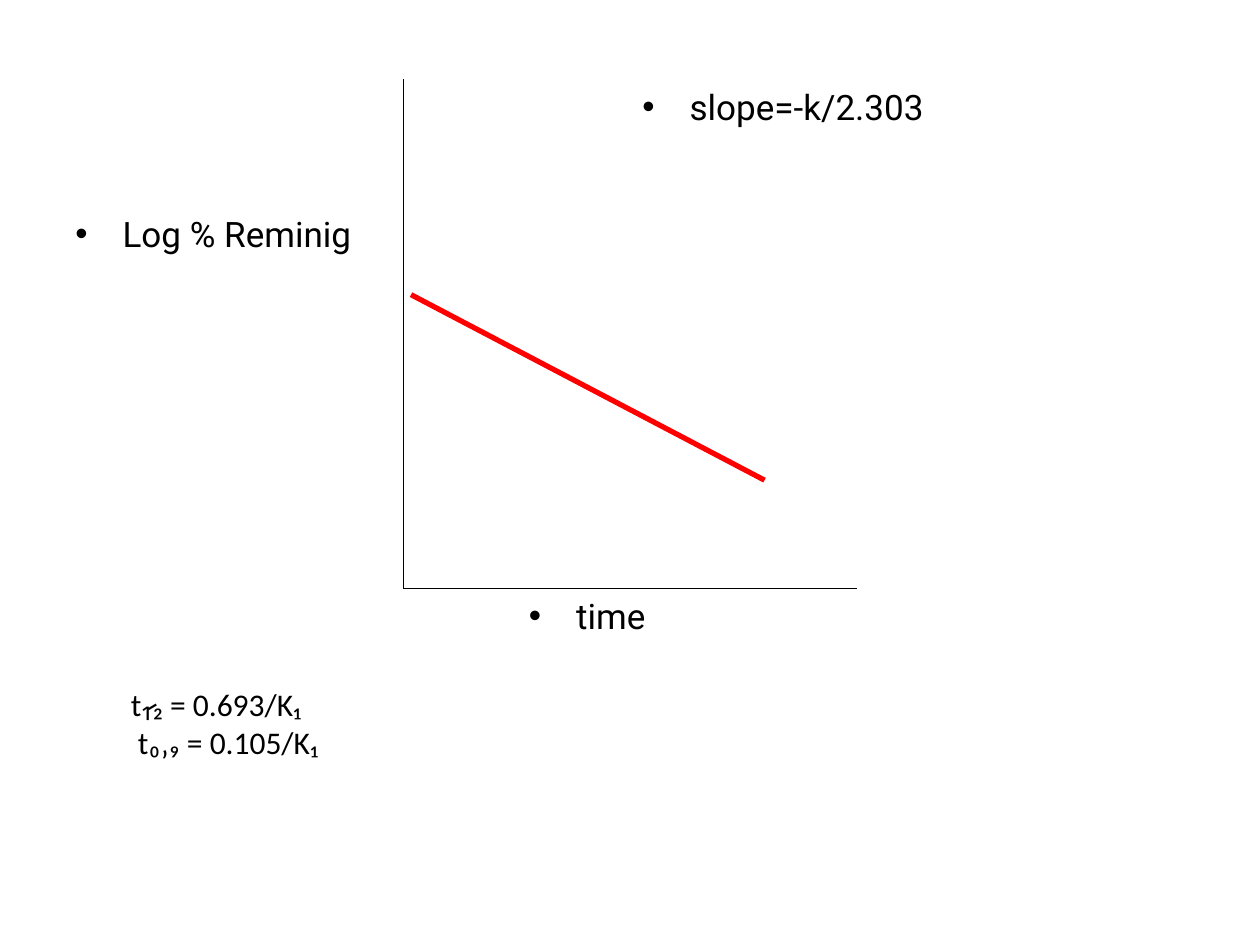
import pptx
import pptx.util
import pptx.dml.color
import pptx.enum.shapes
import pptx.enum.text
import lxml.etree
from pptx.oxml.ns import qn

Pt = pptx.util.Pt
BLACK = pptx.dml.color.RGBColor(0x00, 0x00, 0x00)
RED = pptx.dml.color.RGBColor(0xFF, 0x00, 0x00)
BULLET_INDENT = 27


def add_text(slide, box, text, *, font, size, color=BLACK, bullet=False):
    """Place text in box (left, top, width, height); each line is a paragraph."""
    frame = slide.shapes.add_textbox(*map(Pt, box)).text_frame
    frame.word_wrap = True
    frame.text = text
    for paragraph in frame.paragraphs:
        paragraph.alignment = pptx.enum.text.PP_ALIGN.LEFT
        paragraph.font.name = font
        paragraph.font.size = Pt(size)
        paragraph.font.color.rgb = color
        if bullet:
            properties = paragraph._p.get_or_add_pPr()
            properties.set("marL", str(Pt(BULLET_INDENT)))
            properties.set("indent", str(-Pt(BULLET_INDENT)))
            bullet_font = lxml.etree.Element(qn("a:buFont"), typeface="Arial")
            bullet_mark = lxml.etree.Element(qn("a:buChar"), char="•")
            properties.insert(0, bullet_font)
            bullet_font.addnext(bullet_mark)


def add_line(slide, start, end, color, width):
    line = slide.shapes.add_connector(
        pptx.enum.shapes.MSO_CONNECTOR.STRAIGHT, *map(Pt, (*start, *end)))
    line.line.color.rgb = color
    line.line.width = Pt(width)
    lxml.etree.SubElement(line._element.spPr, qn("a:effectLst"))


def add_decay_plot(slide, left, top, width, height):
    """Draw the axes in the box, with the decay line and the labels around them."""
    right, bottom = left + width, top + height
    add_line(slide, (left, top), (left, bottom), BLACK, 0.75)
    add_line(slide, (right, bottom), (left, bottom), BLACK, 0.75)
    add_line(slide, (left + 4.5, top + 123), (left + 206.5, top + 229), RED, 3)

    labels = (
        ("Log % Reminig", (left - 194.4, top + 72.7, 194.4, 56)),
        ("time", (left + 64.8, bottom, 259.2, 46)),
        ("slope=-k/2.303", (left + 129.6, top, 324, 56)),
    )
    for label, box in labels:
        add_text(slide, box, label, font="Roboto", size=20, bullet=True)


def add_half_life_formulas(slide, left, top, width, height):
    add_text(slide, (left, top, width, height),
             "t₁̷₂ = 0.693/K₁\n t₀‚₉ = 0.105/K₁", font="Calibri", size=18)


def main():
    presentation = pptx.Presentation()
    presentation.slide_width, presentation.slide_height = Pt(720), Pt(540)
    slide = presentation.slides.add_slide(presentation.slide_layouts[6])
    add_decay_plot(slide, 230.4, 45.4, 259.2, 291)
    add_half_life_formulas(slide, 67.7, 388, 129, 51)
    presentation.save("out.pptx")


if __name__ == "__main__":
    main()
